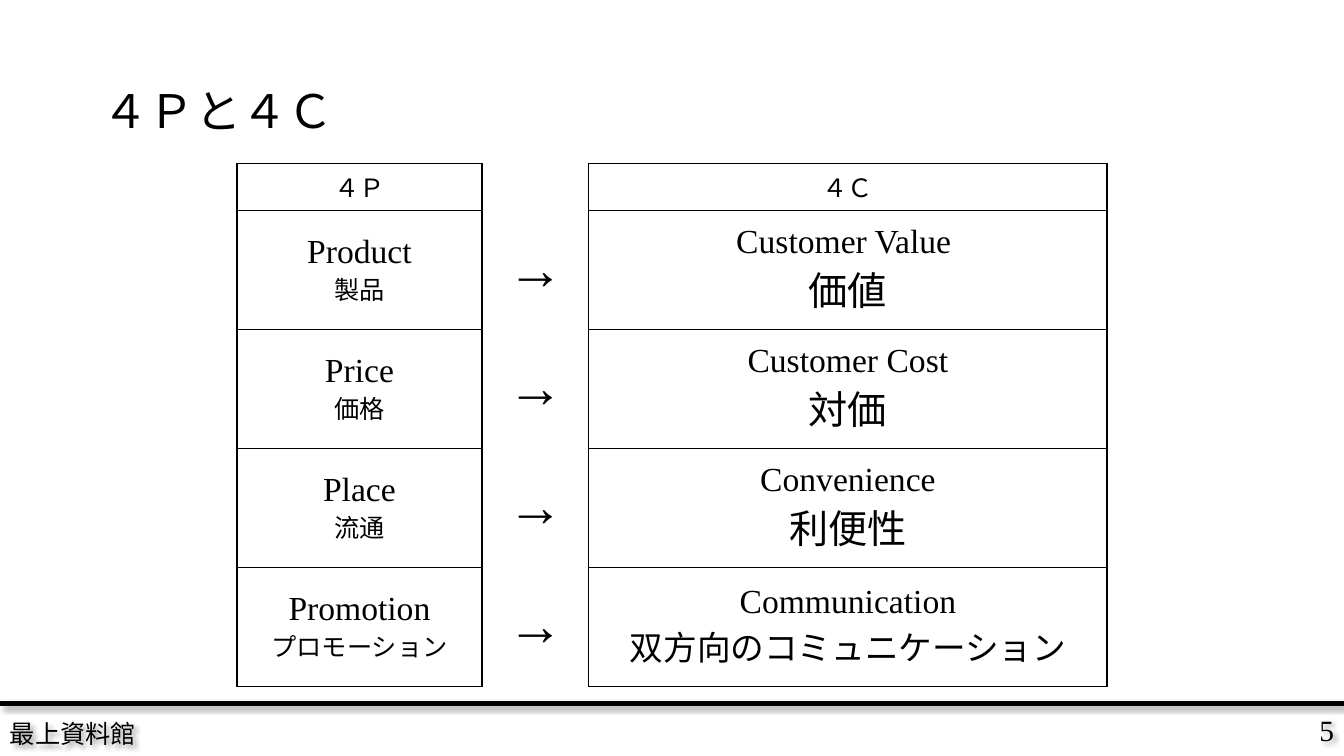
from dataclasses import dataclass

from lxml import etree
from pptx import Presentation
from pptx.dml.color import RGBColor
from pptx.enum.shapes import MSO_CONNECTOR
from pptx.enum.text import MSO_ANCHOR, PP_ALIGN
from pptx.oxml.ns import qn
from pptx.util import Inches, Pt

LEFT, CENTER, RIGHT = PP_ALIGN.LEFT, PP_ALIGN.CENTER, PP_ALIGN.RIGHT
MIDDLE = MSO_ANCHOR.MIDDLE
STRAIGHT = MSO_CONNECTOR.STRAIGHT

TITLE = "４Ｐと４Ｃ"
FOOTER = "最上資料館"
PAGE_NUMBER = "5"
HEADERS = ("４Ｐ", "", "４Ｃ")
ARROW = "→"
PAIRS = [
    (("Product", "製品"), ("Customer Value ", "価値")),
    (("Price", "価格"), ("Customer Cost", "対価")),
    (("Place", "流通"), ("Convenience", "利便性")),
    (("Promotion", "プロモーション"), ("Communication", "双方向のコミュニケーション")),
]


@dataclass(frozen=True)
class Theme:
    ink: str = "000000"
    latin: str = "Times New Roman"
    japanese: str = "Noto Sans CJK JP"
    title: int = 33
    arrow: int = 40
    customer: int = 28
    english: int = 24
    page: int = 21
    small: int = 18
    border: int = 1
    rule: int = 3


THEME = Theme()
SLIDE_W, SLIDE_H = 13.33, 7.5
RULE_Y = 6.98
TABLE_LEFT, TABLE_TOP = 2.35, 1.62
COLUMN_WIDTHS = (2.43, 1.06, 5.14)
HEADER_HEIGHT, PAIR_HEIGHT = 0.47, 1.18


def add_run(paragraph, text, size, latin=THEME.latin):
    run = paragraph.add_run()
    run.text = text
    run.font.size = Pt(size)
    run.font.name = latin
    run.font.color.rgb = RGBColor.from_string(THEME.ink)
    east_asian = etree.SubElement(run.font._element, qn("a:ea"))
    east_asian.set("typeface", THEME.japanese)


def add_shadow(shape):
    effects = etree.SubElement(shape._element.spPr, qn("a:effectLst"))
    shadow = etree.SubElement(effects, qn("a:outerShdw"), blurRad=str(Pt(4)),
                              dist=str(Pt(3)), dir=str(45 * 60000))
    color = etree.SubElement(shadow, qn("a:srgbClr"), val=THEME.ink)
    etree.SubElement(color, qn("a:alpha"), val="40000")


def add_label(slide, text, box, size, align, latin=THEME.latin):
    label = slide.shapes.add_textbox(*map(Inches, box))
    frame = label.text_frame
    frame.word_wrap = True
    frame.vertical_anchor = MIDDLE
    paragraph = frame.paragraphs[0]
    paragraph.alignment = align
    add_run(paragraph, text, size, latin)
    return label


def set_borders(cell, drawn):
    properties = cell._tc.get_or_add_tcPr()
    for position, side in enumerate("LRTB"):
        line = etree.Element(qn("a:ln" + side), w=str(Pt(THEME.border)))
        if side in drawn:
            fill = etree.SubElement(line, qn("a:solidFill"))
            etree.SubElement(fill, qn("a:srgbClr"), val=THEME.ink)
        else:
            etree.SubElement(line, qn("a:noFill"))
        properties.insert(position, line)


def fill_cell(cell, lines, borders):
    cell.fill.background()
    cell.vertical_anchor = MIDDLE
    set_borders(cell, borders)
    frame = cell.text_frame
    for index, (text, size) in enumerate(lines):
        paragraph = frame.add_paragraph() if index else frame.paragraphs[0]
        paragraph.alignment = CENTER
        if text:
            add_run(paragraph, text, size)


def add_comparison(slide):
    rows = [[[(header, THEME.small)] for header in HEADERS]]
    for (product, product_ja), (customer, customer_ja) in PAIRS:
        customer_size = THEME.customer if len(customer_ja) < 10 else THEME.english
        rows.append([
            [(product, THEME.english), (product_ja, THEME.small)],
            [(ARROW, THEME.arrow)],
            [(customer, THEME.english), (customer_ja, customer_size)],
        ])
    heights = [HEADER_HEIGHT] + [PAIR_HEIGHT] * len(PAIRS)
    frame = slide.shapes.add_table(
        len(rows), len(COLUMN_WIDTHS), Inches(TABLE_LEFT), Inches(TABLE_TOP),
        Inches(sum(COLUMN_WIDTHS)), Inches(sum(heights)))
    table = frame.table
    table.first_row = table.horz_banding = False
    for column, width in zip(table.columns, COLUMN_WIDTHS):
        column.width = Inches(width)
    for r, (row, height) in enumerate(zip(rows, heights)):
        table.rows[r].height = Inches(height)
        for c, lines in enumerate(row):
            fill_cell(table.cell(r, c), lines, "LR" if c == 1 else "LRTB")


def main():
    deck = Presentation()
    deck.slide_width, deck.slide_height = Inches(SLIDE_W), Inches(SLIDE_H)
    slide = deck.slides.add_slide(deck.slide_layouts[6])

    page = add_label(slide, PAGE_NUMBER, (11.55, RULE_Y, 1.78, 0.51), THEME.page, RIGHT)
    footer = add_label(slide, FOOTER, (0, 7.05, 3.6, 0.45), THEME.small, LEFT)
    rule = slide.shapes.add_connector(
        STRAIGHT, 0, Inches(RULE_Y), Inches(SLIDE_W), Inches(RULE_Y))
    rule.line.color.rgb = RGBColor.from_string(THEME.ink)
    rule.line.width = Pt(THEME.rule)
    for part in (page, footer, rule):
        add_shadow(part)

    title = add_label(slide, TITLE, (0.92, 0.4, 11.5, 1.45), THEME.title, LEFT,
                      THEME.japanese)
    title.text_frame.paragraphs[0].line_spacing = 0.9
    add_comparison(slide)
    deck.save("out.pptx")


if __name__ == "__main__":
    main()
